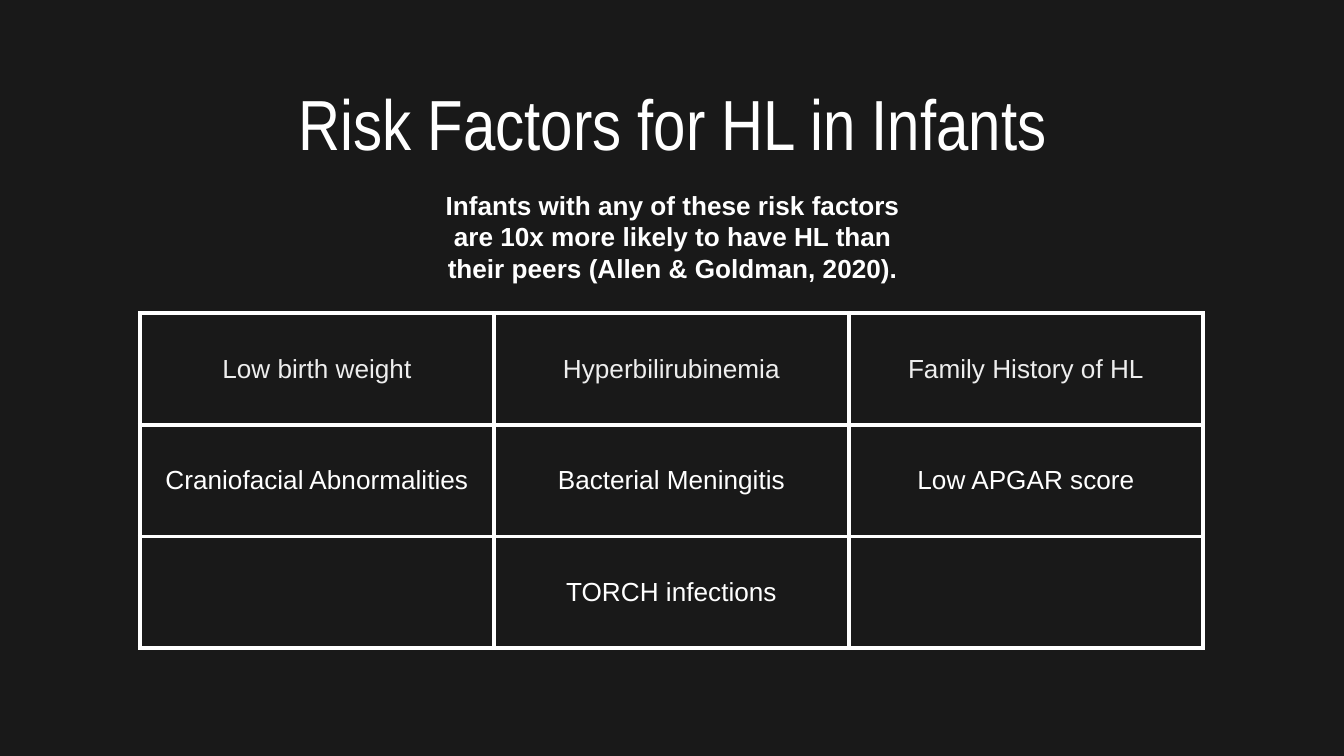
from lxml import etree
from pptx import Presentation
from pptx import util as u
from pptx.dml import color
from pptx.enum import text
from pptx.oxml import ns

RISK_FACTORS = [
    ["Low birth weight", "Hyperbilirubinemia", "Family History of HL"],
    ["Craniofacial Abnormalities", "Bacterial Meningitis", "Low APGAR score"],
    ["", "TORCH infections", ""],
]
ROW_COLOURS = ["EEEEEE", "FFFFFF", "FFFFFF"]


def rgb(value):
    return color.RGBColor.from_string(value)


class Deck:
    background = "191919"
    white = "FFFFFF"
    inset = u.Cm(0.25)
    border = u.Pt(2.25)

    def __init__(self, prs):
        self.s = prs.slides.add_slide(prs.slide_layouts[6])
        fill = self.s.background.fill
        fill.solid()
        fill.fore_color.rgb = rgb(self.background)

    def add_words(self, tf, words, colour, after=0, **font):
        """Put one centred paragraph into a text frame."""
        p = tf.paragraphs[0]
        p.alignment = text.PP_ALIGN.CENTER
        p.space_after = u.Pt(after)
        r = p.add_run()
        r.text = words
        for name, value in font.items():
            setattr(r.font, name, value)
        r.font.color.rgb = rgb(colour)

    def pad(self, target):
        target.margin_left = target.margin_right = self.inset
        target.margin_top = target.margin_bottom = self.inset

    def text_box(self, box, words, anchor, **style):
        sp = self.s.shapes.add_textbox(*map(u.Cm, box))
        tf = sp.text_frame
        tf.word_wrap = True
        tf.vertical_anchor = anchor
        self.pad(tf)
        self.add_words(tf, words, self.white, **style)

    def outline(self, cell):
        """Draw all four borders of a table cell."""
        props = cell._tc.get_or_add_tcPr()
        for i, tag in enumerate(("a:lnL", "a:lnR", "a:lnT", "a:lnB")):
            ln = etree.Element(ns.qn(tag), w=str(self.border))
            fill = etree.SubElement(ln, ns.qn("a:solidFill"))
            etree.SubElement(fill, ns.qn("a:srgbClr"), val=self.white)
            props.insert(i, ln)

    def table(self, left, top, col_width, row_height, rows, colours, **font):
        n_rows, n_cols = len(rows), len(rows[0])
        tbl = self.s.shapes.add_table(
            n_rows, n_cols, u.Cm(left), u.Cm(top),
            u.Cm(col_width * n_cols), u.Cm(row_height * n_rows)).table
        tbl.first_row = tbl.horz_banding = False
        for col in tbl.columns:
            col.width = u.Cm(col_width)
        for row, labels, colour in zip(tbl.rows, rows, colours):
            row.height = u.Cm(row_height)
            for cell, label in zip(row.cells, labels):
                cell.fill.background()
                cell.vertical_anchor = text.MSO_ANCHOR.MIDDLE
                self.pad(cell)
                self.outline(cell)
                if label:
                    self.add_words(cell.text_frame, label, colour, **font)


def main():
    prs = Presentation()
    prs.slide_width, prs.slide_height = u.Cm(25.4), u.Cm(14.29)
    deck = Deck(prs)
    body = {"name": "Arial", "size": u.Pt(14)}

    deck.text_box((2.01, 1.5, 21.41, 1.6), "Risk Factors for HL in Infants",
                  text.MSO_ANCHOR.MIDDLE, name="Arial Narrow", size=u.Pt(38))
    deck.table(2.64, 5.92, 6.7, 2.11, RISK_FACTORS, ROW_COLOURS, **body)
    deck.text_box((7.85, 3.33, 9.73, 1.83),
                  "Infants with any of these risk factors are 10x more likely "
                  "to have HL than their peers (Allen & Goldman, 2020).",
                  text.MSO_ANCHOR.TOP, after=16, bold=True, **body)
    prs.save("out.pptx")


if __name__ == "__main__":
    main()
